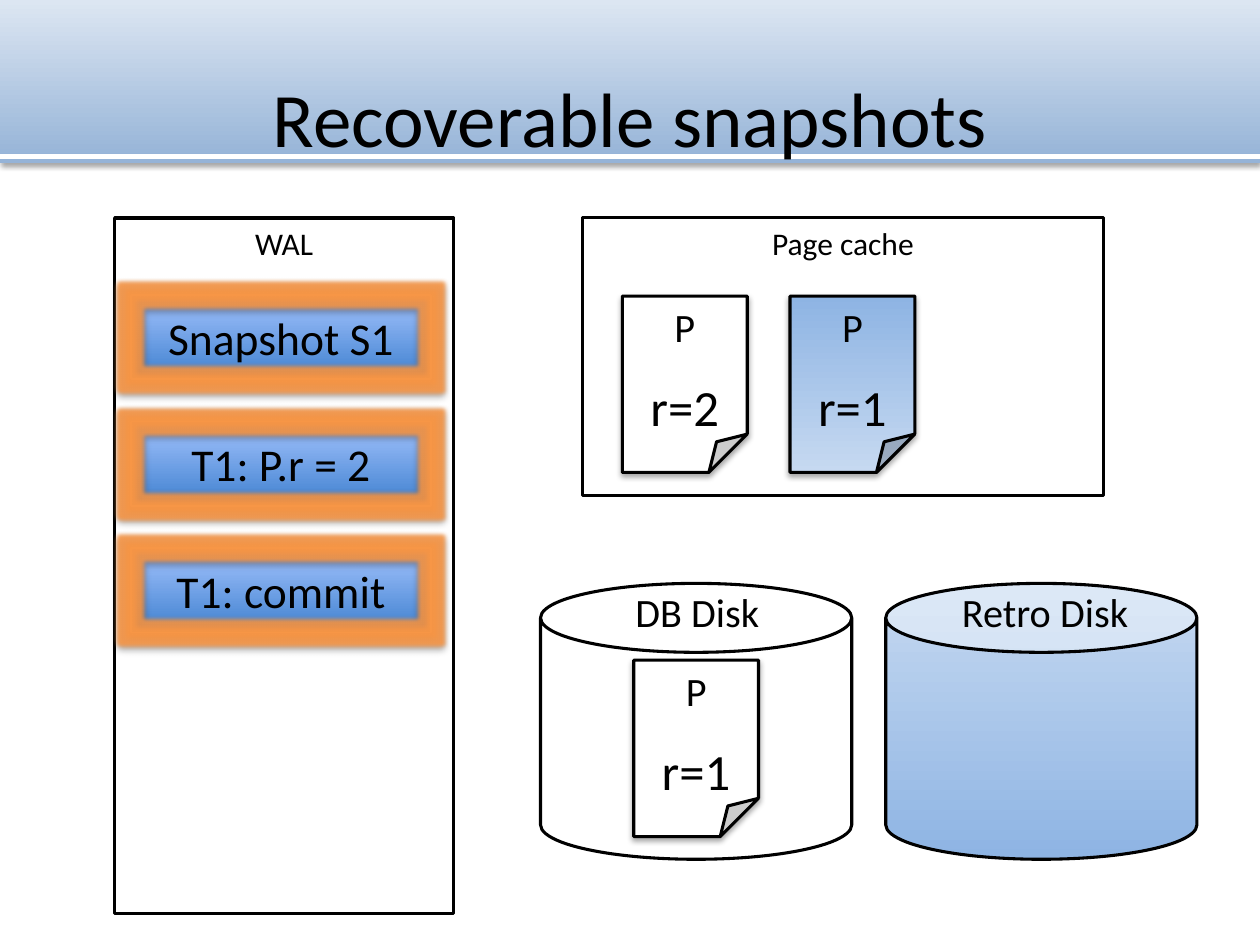
from lxml import etree
from pptx import Presentation
from pptx.dml.color import RGBColor
from pptx.enum.shapes import MSO_CONNECTOR, MSO_SHAPE
from pptx.enum.text import MSO_ANCHOR, PP_ALIGN
from pptx.oxml.ns import qn
from pptx.util import Inches, Pt

RECTANGLE, CAN, PAGE = MSO_SHAPE.RECTANGLE, MSO_SHAPE.CAN, MSO_SHAPE.FOLDED_CORNER
TOP, MIDDLE, CENTER = MSO_ANCHOR.TOP, MSO_ANCHOR.MIDDLE, PP_ALIGN.CENTER
UP, DOWN = 90, 270
FONT = "Calibri"
COLORS = {
    "black": "000000", "white": "FFFFFF", "orange": "F79646",
    "band_dark": "95B3D7", "band_light": "DCE6F2",
    "entry_dark": "3F80CE", "entry_light": "A4C4FF", "entry_line": "4B7EBC",
    "retro_dark": "8EB4E3", "retro_light": "C6D9F1",
}


def color(name):
    return RGBColor.from_string(COLORS[name])


def set_fill(shape, fill, angle):
    if fill is None:
        shape.fill.background()
    elif isinstance(fill, tuple):
        shape.fill.gradient()
        shape.fill.gradient_angle = angle
        for stop, name in zip(shape.fill.gradient_stops, fill):
            stop.color.rgb = color(name)
    else:
        shape.fill.solid()
        shape.fill.fore_color.rgb = color(fill)


def add_effect(shape, tag, name, alpha, **attributes):
    effects = shape._element.spPr.find(qn("a:effectLst"))
    effect = etree.SubElement(effects, qn(tag), attributes)
    value = etree.SubElement(effect, qn("a:srgbClr"), val=COLORS[name])
    etree.SubElement(value, qn("a:alpha"), val=str(alpha * 1000))


def add_shadow(shape):
    add_effect(shape, "a:outerShdw", "black", 35, blurRad="40000",
               dist="23000", dir="5400000", rotWithShape="0")


def write(shape, text, size, anchor=TOP, wrap=True):
    frame = shape.text_frame
    frame.word_wrap = wrap
    frame.vertical_anchor = anchor
    paragraph = frame.paragraphs[0]
    paragraph.text = text
    paragraph.alignment = CENTER
    paragraph.font.name = FONT
    paragraph.font.size = Pt(size)
    paragraph.font.color.rgb = color("black")


def add_box(shapes, kind, box, fill=None, angle=UP, line="black", width=1.75):
    shape = shapes.add_shape(kind, *map(Inches, box))
    shape.shadow.inherit = False
    set_fill(shape, fill, angle)
    if line:
        shape.line.color.rgb = color(line)
        shape.line.width = Pt(width)
    else:
        shape.line.fill.background()
    return shape


def add_label(shapes, box, text, size, wrap=True):
    write(shapes.add_textbox(*map(Inches, box)), text, size, wrap=wrap)


def add_header(slide, box, text):
    left, top, width, height = box
    band = add_box(slide.shapes, RECTANGLE, box, ("band_dark", "band_light"), line=None)
    add_shadow(band)
    rule_y = Inches(top + height - 0.05)
    rule = slide.shapes.add_connector(
        MSO_CONNECTOR.STRAIGHT, Inches(left), rule_y, Inches(left + width), rule_y)
    rule.line.color.rgb = color("white")
    rule.line.width = Pt(3)
    etree.SubElement(rule._element.spPr, qn("a:effectLst"))
    title = slide.shapes.title
    title.left, title.top, title.width, title.height = map(Inches, (0.5, 0.3, 9, 1.25))
    write(title, text, 44, MIDDLE)
    rule._element.addnext(title._element)


def add_log(shapes, box, entries):
    left, top, width, height = box
    write(add_box(shapes, RECTANGLE, box, "white"), "WAL", 18)
    for index, text in enumerate(entries):
        entry_box = (left + 0.13, top + 0.61 + index * 1.005, 2.38, 0.67)
        entry = add_box(shapes, RECTANGLE, entry_box, ("entry_dark", "entry_light"),
                        line="entry_line", width=0.75)
        add_shadow(entry)
        write(entry, text, 26, MIDDLE)
        frame = add_box(shapes, RECTANGLE, entry_box, line="orange", width=1)
        add_effect(frame, "a:glow", "orange", 90, rad="63500")
        add_shadow(frame)


def set_fold(page, ratio):
    guides = page._element.spPr.find(qn("a:prstGeom")).get_or_add_avLst()
    for guide in list(guides):
        guides.remove(guide)
    etree.SubElement(guides, qn("a:gd"), name="adj", fmla=f"val {round(ratio * 100000)}")


def add_page(shapes, left, top, value, fill="white"):
    group = shapes.add_group_shape()
    page = add_box(group.shapes, PAGE, (left, top, 0.99, 1.4), fill, DOWN)
    set_fold(page, 0.307)
    add_shadow(page)
    write(page, "P", 23)
    add_label(group.shapes, (left, top + 0.58, 0.99, 0.59), value, 29)


def add_cache(shapes, box):
    left, top, width, height = box
    write(add_box(shapes, RECTANGLE, box), "Page cache", 18)
    add_page(shapes, left + 0.32, top + 0.62, "r=2")
    add_page(shapes, left + 1.65, top + 0.62, "r=1", ("retro_dark", "retro_light"))


def add_disk(shapes, box, text, label_left, label_width, fill=None):
    left, top, width, height = box
    add_box(shapes, CAN, box, fill)
    add_label(shapes, (left + label_left, top - 0.02, label_width, 0.49), text, 23, wrap=False)


def main():
    presentation = Presentation()
    presentation.slide_width, presentation.slide_height = Inches(10), Inches(7.5)
    slide = presentation.slides.add_slide(presentation.slide_layouts[5])
    shapes = slide.shapes
    add_header(slide, (0, 0, 10, 1.29), "Recoverable snapshots")
    add_log(shapes, (0.91, 1.73, 2.69, 5.52), ["Snapshot S1", "T1: P.r = 2", "T1: commit"])
    add_cache(shapes, (4.62, 1.73, 4.14, 2.2))
    add_disk(shapes, (4.29, 4.63, 2.47, 2.19), "DB Disk", 0.65, 1.19)
    add_page(shapes, 5.03, 5.24, "r=1")
    add_disk(shapes, (7.03, 4.63, 2.47, 2.19), "Retro Disk", 0.5, 1.53,
             ("retro_dark", "retro_light"))
    presentation.save("out.pptx")


if __name__ == "__main__":
    main()
